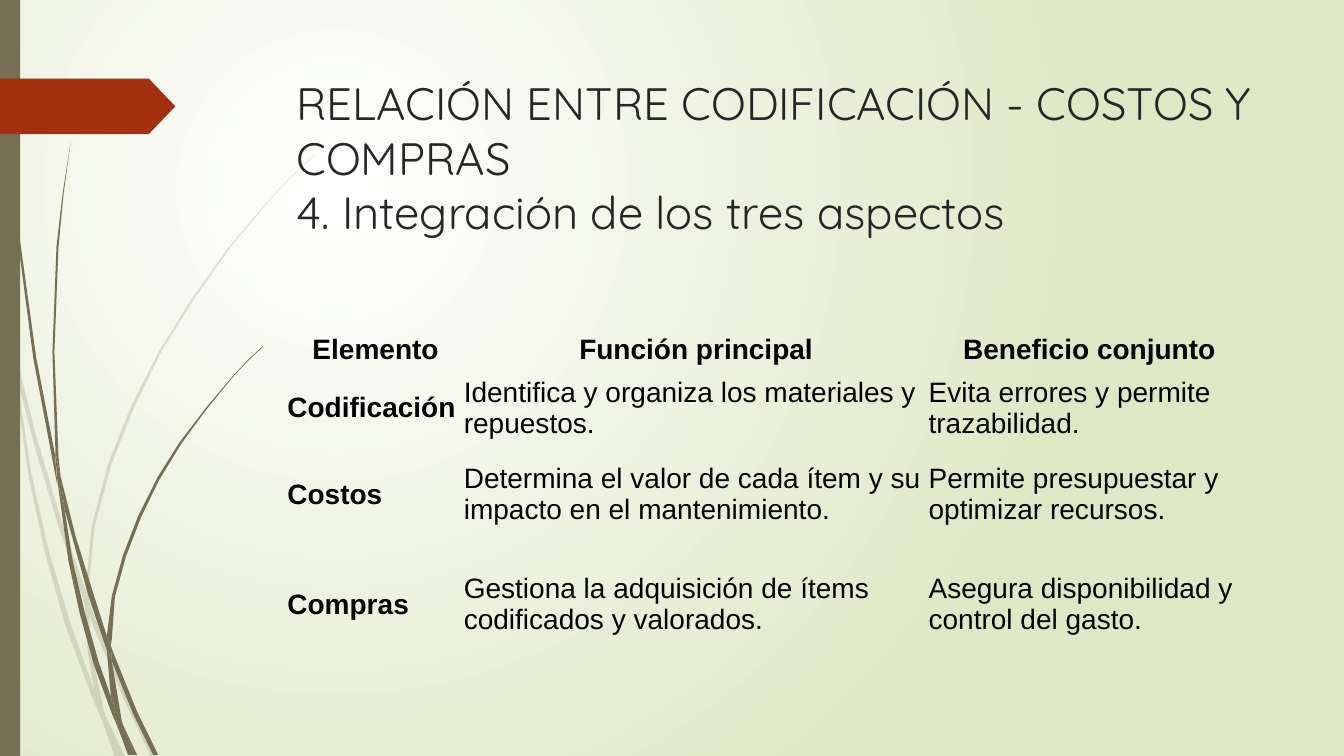
from copy import deepcopy

from lxml import etree
from pptx import Presentation
from pptx import util as u
from pptx.dml.color import RGBColor
from pptx.enum import shapes, text
from pptx.oxml import ns

WIDTH, HEIGHT = 13.33, 7.5
WHITE = RGBColor(0xFF, 0xFF, 0xFF)
PALE_GREEN = RGBColor(0xDF, 0xE8, 0xC4)
OLIVE = RGBColor(0x76, 0x6F, 0x54)
RUST = RGBColor(0xA5, 0x30, 0x10)
CHARCOAL = RGBColor(0x26, 0x26, 0x26)
BLACK = RGBColor(0, 0, 0)
NO_GRID_STYLE = "{2D5ABB26-0587-4C30-8999-92F81FD0307C}"

# Outlines of the grass, piece by piece, as corner points in inches.
FAINT_GRASS = [
    [(0.11, 3.5), (0.09, 3.22), (0, 2.82), (0, 2.99), (0.1, 3.44)],
    [(0.58, 5.22), (0.84, 5.99), (0.85, 5.86), (0.62, 5.2), (0.36, 4.33),
     (0.14, 3.45), (0.17, 3.76), (0.36, 4.49)],
    [(0.92, 6.07), (0.88, 5.96), (0.88, 6.1), (1.23, 6.94), (1.5, 7.51),
     (1.55, 7.51), (1.27, 6.92)],
    [(1.19, 7.51), (1.24, 7.51), (1.05, 7.11)],
    [(0.93, 6.83), (0.7, 6.19), (0.48, 5.45), (0.31, 4.69), (0.17, 3.76), (0.11, 3.5),
     (0.28, 4.7), (0.44, 5.46), (0.65, 6.21), (0.92, 6.93), (1.01, 7.14), (0.99, 7.07)],
    [(0.84, 5.99), (0.87, 6.46), (0.93, 6.83), (0.96, 6.92), (1.05, 7.11),
     (1.03, 7.06), (0.91, 6.46), (0.88, 6.1), (0.88, 6.08)],
    [(0.88, 5.84), (0.94, 5.22), (1.1, 4.62), (1.33, 4.04), (1.6, 3.49), (1.93, 2.96),
     (2.29, 2.45), (2.68, 1.98), (2.9, 1.75), (3.12, 1.54), (3.12, 1.53), (2.89, 1.75),
     (2.68, 1.97), (2.28, 2.44), (1.91, 2.95), (1.58, 3.48), (1.3, 4.03), (1.07, 4.61),
     (0.91, 5.22), (0.85, 5.84), (0.85, 5.86), (0.88, 5.96)],
    [(1.01, 7.14), (1.14, 7.51), (1.19, 7.51)],
    [(0.88, 6.08), (0.88, 6.1), (0.88, 5.96), (0.85, 5.86), (0.84, 5.99)],
    [(0.96, 6.92), (0.93, 6.83), (0.99, 7.07), (1.01, 7.14), (1.19, 7.51), (1.05, 7.11)],
]
SOLID_GRASS = [
    [(0.07, 1.1), (0.17, 2.33), (0.33, 3.55), (0.56, 4.77), (0.57, 4.81), (0.55, 4.57),
     (0.55, 4.53), (0.36, 3.55), (0.19, 2.32), (0.08, 1.09), (0.05, 0.48), (0.04, 0),
     (0.03, 0), (0.04, 0.48)],
    [(0.88, 5.92), (1.06, 6.45), (1.06, 6.33), (1.06, 6.31), (0.93, 5.9), (0.75, 5.32),
     (0.6, 4.72), (0.64, 5.05)],
    [(1.13, 6.49), (1.1, 6.41), (1.11, 6.56), (1.32, 7.08), (1.52, 7.49), (1.57, 7.49),
     (1.36, 7.06)],
    [(1.1, 6.91), (0.98, 6.57), (0.84, 6.07), (0.72, 5.56), (0.64, 5.05), (0.57, 4.77),
     (0.68, 5.57), (0.79, 6.08), (0.93, 6.59), (1.11, 7.08), (1.17, 7.22), (1.16, 7.17)],
    [(0.6, 4.72), (0.58, 4.53), (0.54, 3.49), (0.58, 2.45), (0.63, 1.93), (0.7, 1.41),
     (0.62, 1.93), (0.56, 2.45), (0.52, 3.49), (0.55, 4.49)],
    [(1.33, 7.49), (1.36, 7.49), (1.22, 7.19)],
    [(0.57, 4.77), (0.64, 5.05), (0.6, 4.72), (0.55, 4.49), (0.55, 4.53)],
    [(1.11, 6.33), (1.14, 5.92), (1.25, 5.52), (1.4, 5.13), (1.58, 4.76), (1.8, 4.4),
     (2.05, 4.06), (2.31, 3.74), (2.45, 3.59), (2.61, 3.44), (2.6, 3.44), (2.45, 3.58),
     (2.31, 3.73), (2.04, 4.05), (1.78, 4.39), (1.56, 4.74), (1.37, 5.12), (1.22, 5.51),
     (1.11, 5.91), (1.06, 6.31), (1.1, 6.41)],
    [(1.17, 7.22), (1.27, 7.49), (1.31, 7.49)],
    [(1.06, 6.45), (1.1, 6.91), (1.16, 7.06), (1.22, 7.19), (1.21, 7.16), (1.11, 6.56),
     (1.09, 6.51)],
    [(1.06, 6.45), (1.09, 6.51), (1.11, 6.56), (1.1, 6.41), (1.06, 6.31), (1.06, 6.33)],
    [(1.16, 7.06), (1.1, 6.91), (1.16, 7.17), (1.17, 7.22), (1.3, 7.49), (1.33, 7.49),
     (1.22, 7.19)],
]

TITLE = "RELACIÓN ENTRE CODIFICACIÓN - COSTOS Y COMPRAS\v4. Integración de los tres aspectos"
ROWS = [
    ("Elemento", "Función principal", "Beneficio conjunto"),
    ("Codificación", "Identifica y organiza los materiales y repuestos.",
     "Evita errores y permite trazabilidad."),
    ("Costos", "Determina el valor de cada ítem y su impacto en el mantenimiento.",
     "Permite presupuestar y optimizar recursos."),
    ("Compras", "Gestiona la adquisición de ítems codificados y valorados.",
     "Asegura disponibilidad y control del gasto."),
]
COLUMN_WIDTHS = (1.75, 4.61, 3.19)
ROW_HEIGHTS = (0.54, 0.54, 1.09, 1.09)


def inches(*lengths):
    return [u.Inches(length) for length in lengths]


def write_text(frame, content, *, font, size, color, bold=False,
               align=text.PP_ALIGN.LEFT):
    frame.word_wrap = True
    paragraph = frame.paragraphs[0]
    paragraph.text = content
    paragraph.alignment = align
    for run in paragraph.runs:
        run.font.name, run.font.size = font, u.Pt(size)
        run.font.bold = bold
        run.font.color.rgb = color
    # Line breaks need the same format, or they stretch their line.
    for line_break in frame._txBody.iter(ns.qn("a:br")):
        line_break.append(deepcopy(paragraph.runs[0].font._element))


def paint(shape, color, opacity=100):
    shape.shadow.inherit = False
    shape.line.fill.background()
    shape.fill.solid()
    shape.fill.fore_color.rgb = color
    if opacity < 100:
        color_element = next(shape._element.spPr.iter(ns.qn("a:srgbClr")))
        etree.SubElement(color_element, ns.qn("a:alpha"), val=str(opacity * 1000))


def add_background(slide):
    fill = slide.background.fill
    fill.gradient()
    for stop, color in zip(fill.gradient_stops, (WHITE, PALE_GREEN)):
        stop.color.rgb = color
    linear = next(slide.element.iter(ns.qn("a:lin")))
    gradient = linear.getparent()
    radial = etree.Element(ns.qn("a:path"), path="circle")
    etree.SubElement(radial, ns.qn("a:fillToRect"),
                     l="50000", t="50000", r="100000", b="100000")
    gradient.replace(linear, radial)


def add_grass(slide, outlines, opacity):
    for outline in outlines:
        # The builder keeps whole units only, so points go in as EMU.
        start, *others = [inches(*point) for point in outline]
        builder = slide.shapes.build_freeform(*start)
        builder.add_line_segments(others, close=True)
        paint(builder.convert_to_shape(), OLIVE, opacity)


def add_side_decoration(slide):
    add_grass(slide, FAINT_GRASS, 20)
    add_grass(slide, SOLID_GRASS, 100)
    bar = slide.shapes.add_shape(shapes.MSO_SHAPE.RECTANGLE, *inches(0, 0, 0.2, HEIGHT))
    paint(bar, OLIVE)
    tag = slide.shapes.add_shape(shapes.MSO_SHAPE.PENTAGON, *inches(0, 0.78, 1.74, 0.55))
    tag.adjustments[0] = 0.48
    paint(tag, RUST)


def place_title(slide, left, top, width, height):
    title = slide.shapes.title
    title.left, title.top, title.width, title.height = inches(left, top, width, height)
    frame = title.text_frame
    frame.vertical_anchor = text.MSO_ANCHOR.TOP
    frame.auto_size = text.MSO_AUTO_SIZE.NONE
    frame.margin_top = u.Inches(0.07)
    write_text(frame, TITLE, font="Quicksand", size=32.4, color=CHARCOAL)
    slide.shapes._spTree.append(title._element)  # in front of the grass


def add_summary_table(slide, left, top):
    frame = slide.shapes.add_table(
        len(ROWS), len(COLUMN_WIDTHS),
        *inches(left, top, sum(COLUMN_WIDTHS), sum(ROW_HEIGHTS)))
    table = frame.table
    table.first_row = table.horz_banding = False
    next(table._tbl.iter(ns.qn("a:tableStyleId"))).text = NO_GRID_STYLE
    for column, width in zip(table.columns, COLUMN_WIDTHS):
        column.width = u.Inches(width)
    for row, height in zip(table.rows, ROW_HEIGHTS):
        row.height = u.Inches(height)
    for row_index, row in enumerate(ROWS):
        for column_index, content in enumerate(row):
            cell = table.cell(row_index, column_index)
            cell.fill.background()
            cell.vertical_anchor = text.MSO_ANCHOR.MIDDLE
            cell.margin_left = cell.margin_right = cell.margin_top = cell.margin_bottom = 0
            header = row_index == 0
            write_text(cell.text_frame, content, font="Arial", size=20, color=BLACK,
                       bold=header or column_index == 0,
                       align=text.PP_ALIGN.CENTER if header else text.PP_ALIGN.LEFT)


def main():
    presentation = Presentation()
    presentation.slide_width, presentation.slide_height = inches(WIDTH, HEIGHT)
    slide = presentation.slides.add_slide(presentation.slide_layouts[5])
    add_background(slide)
    add_side_decoration(slide)
    place_title(slide, 2.84, 0.68, 9.75, 1.31)
    add_summary_table(slide, 2.85, 3.2)
    presentation.save("out.pptx")


if __name__ == "__main__":
    main()
